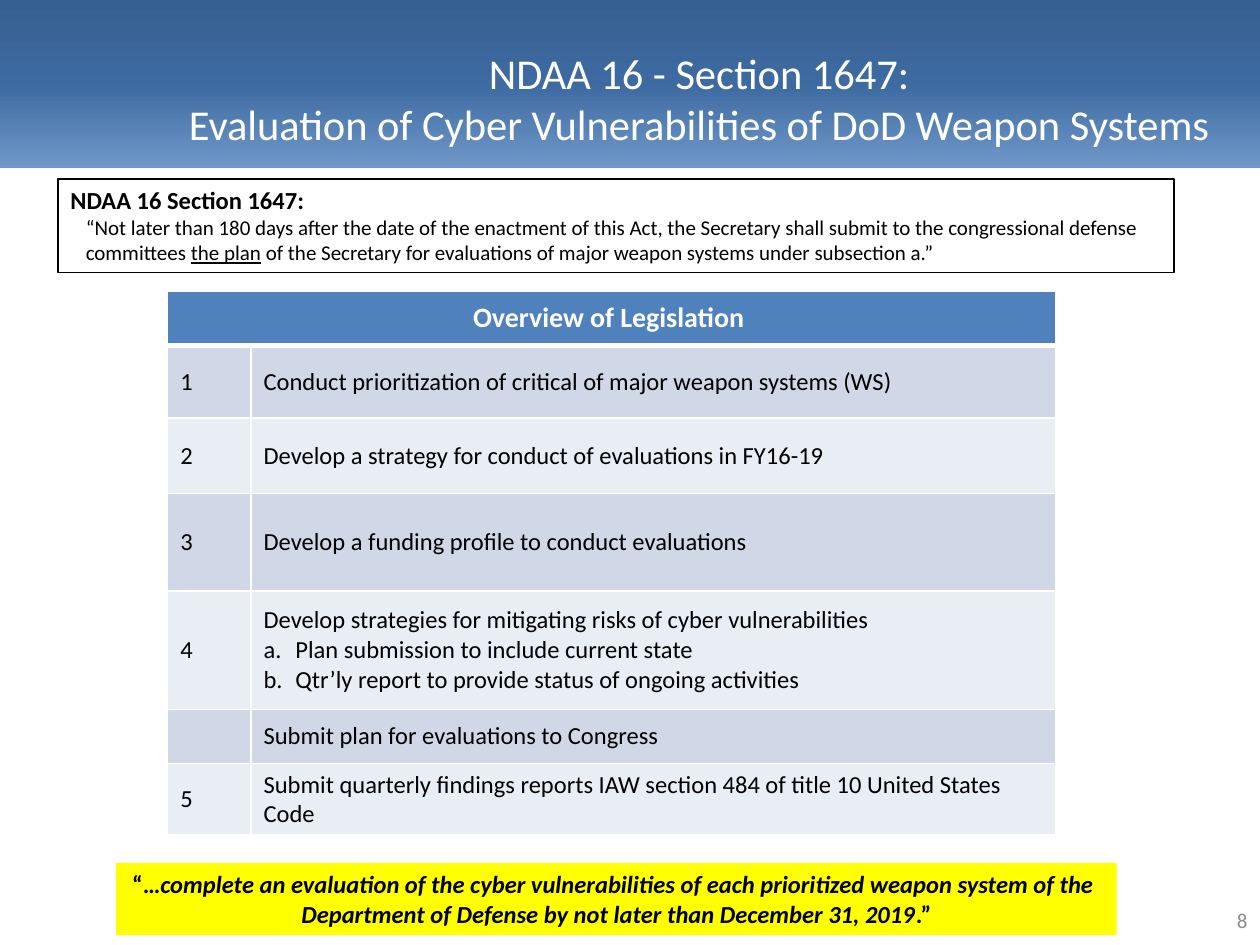
from copy import deepcopy
from lxml import etree
from pptx import Presentation
from pptx.dml.color import RGBColor
from pptx.enum import shapes, text
from pptx.oxml.ns import qn
from pptx.util import Cm, Pt

HUES = {"white": "FFFFFF", "black": "000000", "gray": "8C8C8C",
        "head": "4F81BD", "odd": "D0D8E8", "even": "E9EDF4", "note": "FFFF00"}
BAND = [(0, "376092"), (0.5, "3D6AA1"), (1, "7099CA")]

# A paragraph is a list of (text, style) runs; style letters: b, i, u.
TITLE = [[("NDAA 16 - Section 1647:", "")],
         [("Evaluation of Cyber Vulnerabilities of DoD Weapon Systems", "")]]
LAW = [("NDAA 16 Section 1647:", "b")]
QUOTE = [("“Not later than 180 days after the date of the enactment of this Act, "
          "the Secretary shall submit to the congressional defense committees ", ""),
         ("the plan", "u"),
         (" of the Secretary for evaluations of major weapon systems "
          "under subsection a.”", "")]
GOAL = [[("“…", "b"),
         ("complete an evaluation of the cyber vulnerabilities of each "
          "prioritized weapon system of the ", "bi")],
        [("Department of Defense by not later than December 31, 2019", "bi"),
         (".”", "b")]]
HEAD = "Overview of Legislation "
# number, row height in cm, lines (those after the first are lettered)
TASKS = [
    ("1", 1.47, ["Conduct prioritization of critical of major weapon systems (WS)"]),
    ("2", 1.52, ["Develop a strategy for conduct of evaluations in FY16-19"]),
    ("3", 1.96, ["Develop a funding profile to conduct evaluations"]),
    ("4", 2.39, ["Develop strategies for mitigating risks of cyber vulnerabilities",
                 "Plan submission to include current state",
                 "Qtr’ly report to provide status of ongoing activities"]),
    ("", 1.09, ["Submit plan for evaluations to Congress"]),
    ("5", 1.42, ["Submit quarterly findings reports IAW section 484 of title 10 "
                 "United States Code"]),
]
COLS = [1.68, 16.23]
TOP = 1.09
LEFT, MID, RIGHT = text.PP_ALIGN.LEFT, text.PP_ALIGN.CENTER, text.PP_ALIGN.RIGHT


def rgb(name):
    return RGBColor.from_string(HUES.get(name, name))


def write(frame, paras, size, hue="black", align=LEFT):
    """Fill a text frame and return its paragraphs."""
    for k, runs in enumerate(paras):
        para = frame.paragraphs[0] if k == 0 else frame.add_paragraph()
        para.alignment = align
        for words, style in runs:
            run = para.add_run()
            run.text = words
            font = run.font
            font.name, font.size = "Calibri", Pt(size)
            font.color.rgb = rgb(hue)
            font.bold, font.italic = "b" in style, "i" in style
            font.underline = "u" in style
    return frame.paragraphs


def indent(para, left, hang=0):
    props = para._p.get_or_add_pPr()
    props.set("marL", str(Cm(left)))
    props.set("indent", str(-Cm(hang)))
    return props


def rect(slide, box, fill=None, line=None):
    shape = slide.shapes.add_shape(shapes.MSO_SHAPE.RECTANGLE, *map(Cm, box))
    shape.shadow.inherit = False
    if fill:
        shape.fill.solid()
        shape.fill.fore_color.rgb = rgb(fill)
    else:
        shape.fill.background()
    if line:
        shape.line.color.rgb = rgb(line)
        shape.line.width = Pt(0.75)
    else:
        shape.line.fill.background()
    frame = shape.text_frame
    frame.vertical_anchor = text.MSO_ANCHOR.TOP
    return shape


def label(slide, box, anchor):
    frame = slide.shapes.add_textbox(*map(Cm, box)).text_frame
    frame.word_wrap = True
    frame.vertical_anchor = anchor
    return frame


def band(slide):
    shape = rect(slide, (0, 0, 25.4, 3.39))
    shape.fill.gradient()
    shape.fill.gradient_angle = 270
    stops = shape._element.spPr.find(qn("a:gradFill")).find(qn("a:gsLst"))
    stops.append(deepcopy(stops[-1]))
    for stop, (pos, hue) in zip(shape.fill.gradient_stops, BAND):
        stop.position = pos
        stop.color.rgb = rgb(hue)


def dress(cell, fill, top=1, low=1):
    """Set the borders, then the fill, of a cell."""
    props = cell._tc.get_or_add_tcPr()
    for side, width in zip("LRTB", (1, 1, top, low)):
        line = etree.SubElement(props, qn("a:ln" + side), w=str(Pt(width)))
        solid = etree.SubElement(line, qn("a:solidFill"))
        etree.SubElement(solid, qn("a:srgbClr"), val=HUES["white"])
    cell.fill.solid()
    cell.fill.fore_color.rgb = rgb(fill)
    cell.vertical_anchor = text.MSO_ANCHOR.MIDDLE


def grid(slide):
    highs = [TOP] + [task[1] for task in TASKS]
    table = slide.shapes.add_table(len(highs), len(COLS), Cm(3.38), Cm(5.87),
                                   Cm(sum(COLS)), Cm(sum(highs))).table
    for col, wide in zip(table.columns, COLS):
        col.width = Cm(wide)
    for row, high in zip(table.rows, highs):
        row.height = Cm(high)
    first = table.cell(0, 0)
    first.merge(table.cell(0, 1))
    for cell in table.rows[0].cells:
        dress(cell, "head", low=3)
    write(first.text_frame, [[(HEAD, "b")]], 16, "white", MID)
    for r, (num, _, lines) in enumerate(TASKS, 1):
        left, right = table.rows[r].cells
        for cell in (left, right):
            dress(cell, "odd" if r % 2 else "even", top=3 if r == 1 else 1)
        if num:
            write(left.text_frame, [[(num, "")]], 14)
        paras = write(right.text_frame, [[(line, "")] for line in lines], 14)
        for para in paras[1:]:
            etree.SubElement(indent(para, 0.64, 0.64), qn("a:buAutoNum"),
                             type="alphaLcPeriod")


def main():
    deck = Presentation()
    deck.slide_width, deck.slide_height = Cm(25.4), Cm(19.05)
    slide = deck.slides.add_slide(deck.slide_layouts[6])

    band(slide)
    title = label(slide, (2.87, 0.91, 22.45, 3.18), text.MSO_ANCHOR.TOP)
    title.margin_top = Cm(0.04)
    write(title, TITLE, 24.3, "white", MID)
    page = label(slide, (19.48, 18.03, 5.92, 1.02), text.MSO_ANCHOR.MIDDLE)
    write(page, [[("8", "")]], 12, "gray", RIGHT)

    grid(slide)

    law = rect(slide, (1.17, 3.61, 22.5, 1.88), line="black").text_frame
    law.word_wrap = True
    write(law, [LAW], 14)
    quote = law.add_paragraph()
    indent(quote, 0.31)
    for words, style in QUOTE:
        run = quote.add_run()
        run.text = words
        run.font.name, run.font.size = "Calibri", Pt(12)
        run.font.color.rgb = rgb("black")
        run.font.underline = "u" in style
    quote.alignment = LEFT

    goal = rect(slide, (2.34, 17.4, 20.17, 1.45), "note").text_frame
    goal.word_wrap = False
    write(goal, GOAL, 14, align=MID)
    deck.save("out.pptx")


if __name__ == "__main__":
    main()
